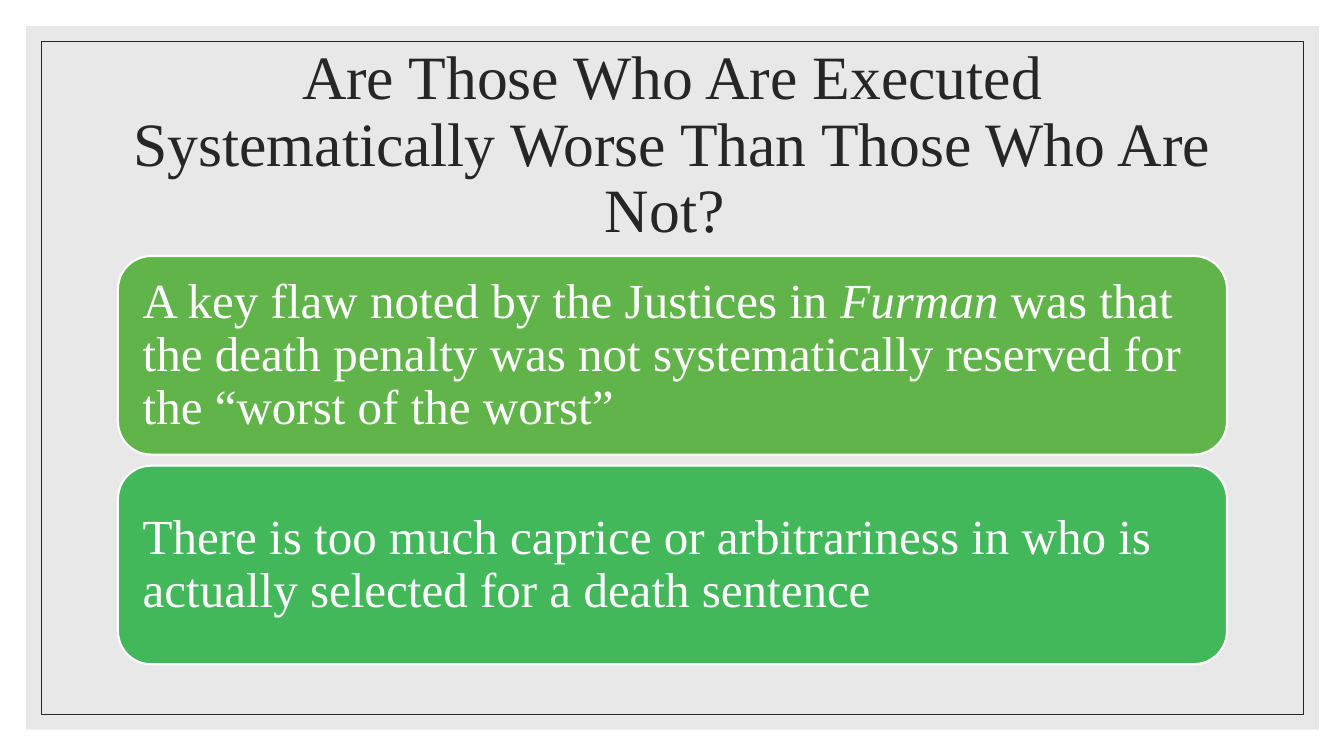
"""Build a slide asking whether those who are executed are the worst."""
import pptx
import pptx.util
import pptx.dml.color
import pptx.enum.shapes
import pptx.enum.text
import pptx.oxml
import pptx.oxml.ns

Inches = pptx.util.Inches
Pt = pptx.util.Pt
shapes = pptx.enum.shapes.MSO_SHAPE
align = pptx.enum.text.PP_ALIGN


def paint(form, color):
    form.solid()
    form.fore_color.rgb = pptx.dml.color.RGBColor.from_string(color)


def write(shape, runs, size, color, side=align.LEFT, inset=(0.15, 0.15)):
    frame = shape.text_frame
    frame.word_wrap = True
    frame.vertical_anchor = pptx.enum.text.MSO_ANCHOR.MIDDLE
    frame.margin_left = frame.margin_right = Inches(inset[0])
    frame.margin_top = frame.margin_bottom = Inches(inset[1])
    para = frame.paragraphs[0]
    para.alignment = side
    para.line_spacing = 0.9
    for text, slant in runs:
        run = para.add_run()
        run.text = text
        run.font.name = "Times New Roman"
        run.font.size = Pt(size)
        run.font.italic = slant
        paint(run.font.fill, color)


deck = pptx.Presentation()
deck.slide_width = Inches(13.33)
deck.slide_height = Inches(7.5)
slide = deck.slides.add_slide(deck.slide_layouts[6])
paint(slide.background.fill, "FFFFFF")

panel = slide.shapes.add_shape(
    shapes.RECTANGLE, Inches(0.26), Inches(0.26), Inches(12.82), Inches(6.98))
panel.shadow.inherit = False
paint(panel.fill, "D9D9D9")
panel.line.fill.background()
tint = panel.fill._xPr.find(".//" + pptx.oxml.ns.qn("a:srgbClr"))
tint.append(pptx.oxml.parse_xml(
    f'<a:alpha {pptx.oxml.ns.nsdecls("a")} val="60000"/>'))

frame = slide.shapes.add_shape(
    shapes.RECTANGLE, Inches(0.41), Inches(0.41), Inches(12.52), Inches(6.68))
frame.shadow.inherit = False
frame.fill.background()
paint(frame.line.fill, "262626")
frame.line.width = Pt(0.5)

title = slide.shapes.add_textbox(Inches(1.17), Inches(0.7), Inches(11), Inches(1.5))
write(title, [("Are Those Who Are Executed Systematically Worse Than Those Who Are Not? ", False)],
      size=44, color="262626", side=align.CENTER, inset=(0.1, 0.05))

points = [
    ("61B44A", [("A key flaw noted by the Justices in ", False),
                ("Furman ", True),
                ("was that the death penalty was not systematically reserved "
                 "for the “worst of the worst”", False)]),
    ("43B85A", [("There is too much caprice or arbitrariness in who is actually "
                 "selected for a death sentence", False)]),
]
for row, (color, runs) in enumerate(points):
    box = slide.shapes.add_shape(
        shapes.ROUNDED_RECTANGLE, Inches(1.17), Inches(2.54 + row * 2.08),
        Inches(11), Inches(1.97))
    box.shadow.inherit = False
    paint(box.fill, color)
    paint(box.line.fill, "FFFFFF")
    box.line.width = Pt(1.5)
    write(box, runs, size=35, color="FFFFFF")

deck.save("out.pptx")
